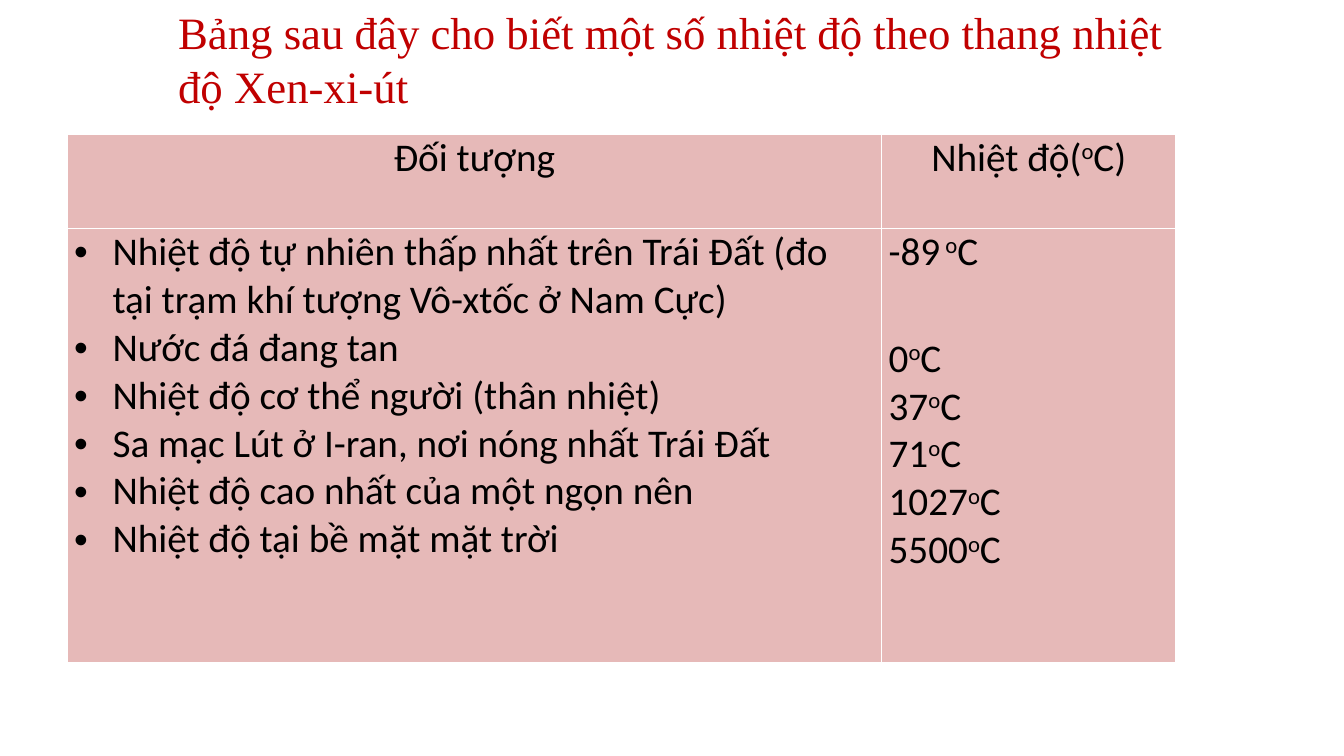
from lxml import etree
from pptx import Presentation
from pptx.dml.color import RGBColor
from pptx.enum.text import MSO_ANCHOR, PP_ALIGN
from pptx.oxml.ns import qn
from pptx.util import Inches, Pt

LEFT, CENTER, JUSTIFY = PP_ALIGN.LEFT, PP_ALIGN.CENTER, PP_ALIGN.JUSTIFY
TOP = MSO_ANCHOR.TOP
TITLE_ONLY = 5
COLORS = {"title": "C00000", "text": "000000", "cell": "E6B9B8", "border": "FFFFFF"}

TITLE = "Bảng sau đây cho biết một số nhiệt độ theo thang nhiệt độ Xen-xi-út"
HEADERS = ["Đối tượng", "Nhiệt độ(^o^C)"]
READINGS = [
    ("Nhiệt độ tự nhiên thấp nhất trên Trái Đất (đo tại trạm khí tượng Vô-xtốc ở Nam Cực)",
     "-89^ o^C"),
    ("Nước đá đang tan", "0^o^C"),
    ("Nhiệt độ cơ thể người (thân nhiệt)", "37^o^C"),
    ("Sa mạc Lút ở I-ran, nơi nóng nhất Trái Đất", "71^o^C"),
    ("Nhiệt độ cao nhất của một ngọn nên", "1027^o^C"),
    ("Nhiệt độ tại bề mặt mặt trời", "5500^o^C"),
]
WRAPPED_LINE_GAP = 42  # points: the first object takes two lines


def grid(units):
    """Length of grid units; the slide is 40 units wide and 22.5 high."""
    return Inches(units / 3)


def write(frame, lines, font="Calibri", size=28, color="text", align=LEFT,
          bullet=False, first_gap=0):
    """Fill a frame with one paragraph a line; text between carets is raised."""
    for number, line in enumerate(lines):
        paragraph = frame.add_paragraph() if number else frame.paragraphs[0]
        paragraph.alignment = align
        if first_gap and number == 0:
            paragraph.space_after = Pt(first_gap)
        if bullet:
            properties = paragraph._p.get_or_add_pPr()
            properties.set("marL", str(Inches(0.38)))
            properties.set("indent", str(-Inches(0.38)))
            etree.SubElement(properties, qn("a:buFont")).set("typeface", "Arial")
            etree.SubElement(properties, qn("a:buChar")).set("char", "•")
        for part, text in enumerate(line.split("^")):
            run = paragraph.add_run()
            run.text = text
            run.font.name = font
            run.font.size = Pt(size)
            run.font.color.rgb = RGBColor.from_string(COLORS[color])
            if part % 2:
                run._r.get_or_add_rPr().set("baseline", "30000")


class SlideBuilder:
    def __init__(self, deck):
        self.slide = deck.slides.add_slide(deck.slide_layouts[TITLE_ONLY])

    def title(self, text, left, top, width, height, **style):
        title = self.slide.shapes.title
        title.left, title.top = grid(left), grid(top)
        title.width, title.height = grid(width), grid(height)
        title.text_frame.vertical_anchor = TOP
        title.text_frame.word_wrap = True
        write(title.text_frame, [text], **style)

    def table(self, left, top, widths, heights):
        table = self.slide.shapes.add_table(
            len(heights), len(widths), grid(left), grid(top),
            grid(sum(widths)), grid(sum(heights))).table
        for column, width in zip(table.columns, widths):
            column.width = grid(width)
        for row, height in zip(table.rows, heights):
            row.height = grid(height)
        for cell in table.iter_cells():
            self.style_cell(cell)
        return table

    def style_cell(self, cell):
        cell.margin_left = cell.margin_right = Inches(0.07)
        cell.margin_top = cell.margin_bottom = 0
        properties = cell._tc.get_or_add_tcPr()
        for side in ("lnL", "lnR", "lnT", "lnB"):
            line = etree.SubElement(properties, qn(f"a:{side}"), w=str(Pt(1)))
            fill = etree.SubElement(line, qn("a:solidFill"))
            etree.SubElement(fill, qn("a:srgbClr"), val=COLORS["border"])
        cell.fill.solid()
        cell.fill.fore_color.rgb = RGBColor.from_string(COLORS["cell"])


def main():
    deck = Presentation()
    deck.slide_width, deck.slide_height = grid(40), grid(22.5)
    builder = SlideBuilder(deck)
    builder.title(TITLE, 5, 0, 30, 3.54, font="Times New Roman", size=32, color="title")

    table = builder.table(2, 4, widths=[24.24, 8.76], heights=[2.79, 12.93])
    for column, header in enumerate(HEADERS):
        write(table.cell(0, column).text_frame, [header], align=CENTER)
    objects, temperatures = zip(*READINGS)
    write(table.cell(1, 0).text_frame, objects, bullet=True)
    write(table.cell(1, 1).text_frame, temperatures, align=JUSTIFY,
          first_gap=WRAPPED_LINE_GAP)
    deck.save("out.pptx")


if __name__ == "__main__":
    main()
